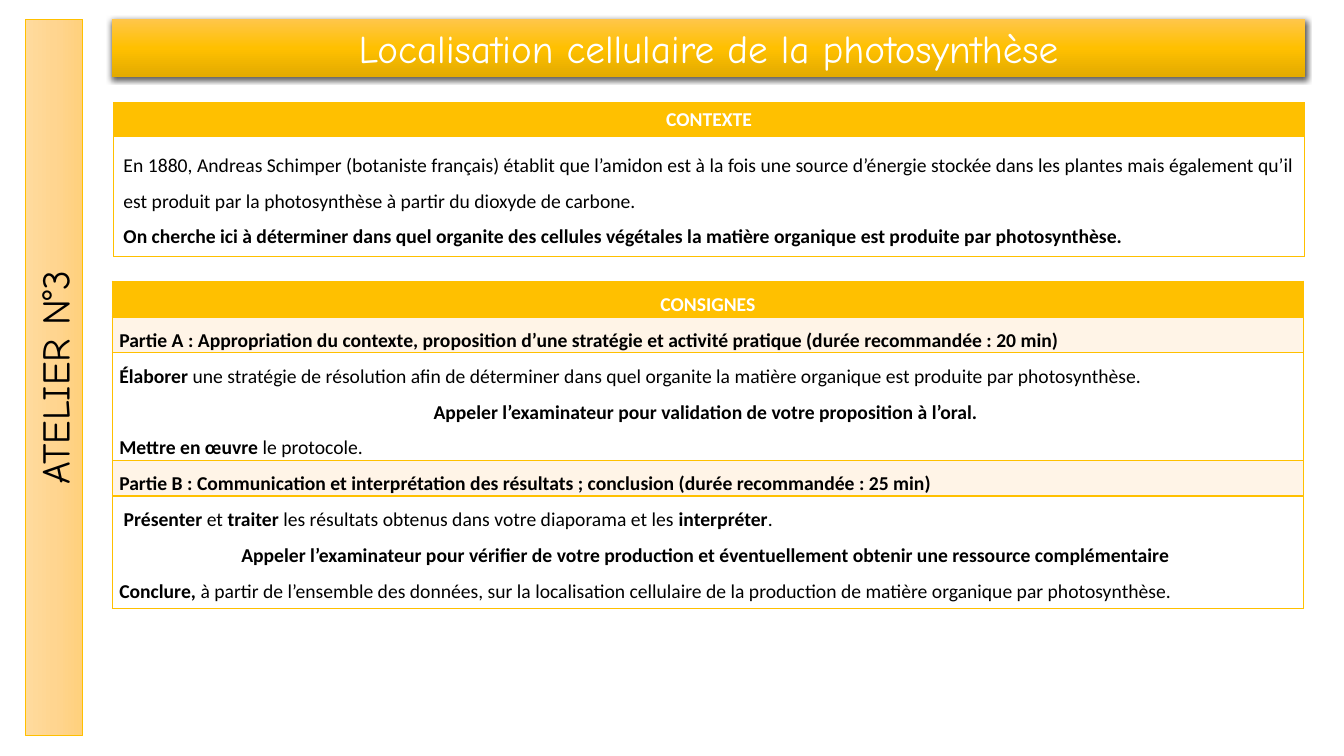
from copy import deepcopy
from lxml import etree
from pptx import Presentation
from pptx.dml.color import RGBColor
from pptx.enum.shapes import MSO_SHAPE
from pptx.enum.text import MSO_ANCHOR, MSO_AUTO_SIZE, PP_ALIGN
from pptx.oxml.ns import qn
from pptx.util import Pt

RECT = MSO_SHAPE.RECTANGLE
MIDDLE = MSO_ANCHOR.MIDDLE
NO_FIT = MSO_AUTO_SIZE.NONE
MID, JUST = PP_ALIGN.CENTER, PP_ALIGN.JUSTIFY

# Content: asterisks switch bold on and off
TITLE = "Localisation cellulaire de la photosynthèse"
SIDE = "ATELIER N°3"
COLORS = {"gold": "FFC000", "cream": "FFF4E7", "white": "FFFFFF", "black": "000000"}
BANNER_FADE = ["FFC64B", "FFC000", "E3AB00"]
SIDE_FADE = ["FFDB9E", "FFD590", "FFD07C"]

# Each row: height, fill, text colour, line spacing, paragraphs
CONTEXT = [
    (22.4, "gold", "white", 1, [(MID, "*CONTEXTE*")]),
    (85.6, "white", "black", 1.5, [
        (JUST, "En 1880, Andreas Schimper (botaniste français) établit que l’amidon est à la fois "
               "une source d’énergie stockée dans les plantes mais également qu’il est produit "
               "par la photosynthèse à partir du dioxyde de carbone."),
        (JUST, "*On cherche ici à déterminer dans quel organite des cellules végétales la matière "
               "organique est produite par photosynthèse.*"),
    ]),
]
TASKS = [
    (20, "gold", "white", 1.5, [(MID, "*CONSIGNES*")]),
    (20, "cream", "black", 1.5, [
        (JUST, "*Partie A : Appropriation du contexte, proposition d’une stratégie et activité "
               "pratique (durée recommandée : 20 min)*"),
    ]),
    (65.5, "white", "black", 1.5, [
        (JUST, "*Élaborer *une stratégie de résolution afin de déterminer dans quel organite la "
               "matière organique est produite par photosynthèse."),
        (MID, "*Appeler l’examinateur pour validation de votre proposition à l’oral. *"),
        (JUST, "*Mettre en œuvre *le protocole."),
    ]),
    (20, "cream", "black", 1.5, [
        (JUST, "*Partie B : Communication et interprétation des résultats ; conclusion "
               "(durée recommandée : 25 min)*"),
    ]),
    (80.6, "white", "black", 1.5, [
        (JUST, "* Présenter *et* traiter *les résultats obtenus dans votre diaporama et les "
               "*interpréter*."),
        (MID, "*Appeler l’examinateur pour vérifier de votre production et éventuellement obtenir "
              "une ressource complémentaire *"),
        (JUST, "*Conclure, *à partir de l’ensemble des données, sur la localisation cellulaire de "
               "la production de matière organique par photosynthèse."),
    ]),
]


def rgb(name):
    return RGBColor.from_string(COLORS[name])


def style(run, font, size, color, bold=False):
    run.font.name, run.font.size, run.font.bold = font, Pt(size), bold
    run.font.color.rgb = rgb(color)


def fade(shape, hues):
    """Fill a shape with evenly spaced gradient stops, top to bottom."""
    shape.fill.gradient()
    shape.fill.gradient_angle = 270
    stops = shape._element.spPr.find(".//" + qn("a:gsLst"))
    stops.append(deepcopy(stops[-1]))
    for i, (stop, hue) in enumerate(zip(shape.fill.gradient_stops, hues)):
        stop.position = i / (len(hues) - 1)
        stop.color.rgb = RGBColor.from_string(hue)


def label(shape, text, color):
    frame = shape.text_frame
    frame.text = text
    frame.word_wrap, frame.auto_size = True, NO_FIT
    frame.vertical_anchor = MIDDLE
    para = frame.paragraphs[0]
    para.alignment = MID
    style(para.runs[0], "Comic Neue", 28, color)


def border(cell, width):
    props = cell._tc.get_or_add_tcPr()
    for i, side in enumerate("LRTB"):
        line = etree.Element(qn("a:ln" + side), w=str(Pt(width)))
        fill = etree.SubElement(line, qn("a:solidFill"))
        etree.SubElement(fill, qn("a:srgbClr"), val=COLORS["gold"])
        props.insert(i, line)


def write(frame, paras, color, gap):
    for i, (align, text) in enumerate(paras):
        para = frame.add_paragraph() if i else frame.paragraphs[0]
        para.alignment, para.line_spacing = align, gap
        for k, part in enumerate(text.split("*")):
            if part:
                run = para.add_run()
                run.text = part
                style(run, "Calibri", 14, color, k % 2 == 1)


def grid(slide, left, top, rows, line, pad):
    """Draw a one-column table; pad is the side and the top margin."""
    high = sum(row[0] for row in rows)
    table = slide.shapes.add_table(len(rows), 1, Pt(left), Pt(top), Pt(851), Pt(high)).table
    table.first_row = table.horz_banding = False
    for i, (height, fill, color, gap, paras) in enumerate(rows):
        table.rows[i].height = Pt(height)
        cell = table.cell(i, 0)
        cell.margin_left = cell.margin_right = Pt(pad[0])
        cell.margin_top = cell.margin_bottom = Pt(pad[1])
        cell.fill.solid()
        cell.fill.fore_color.rgb = rgb(fill)
        border(cell, line)
        write(cell.text_frame, paras, color, gap)


def main():
    deck = Presentation()
    deck.slide_width, deck.slide_height = Pt(960), Pt(540)
    slide = deck.slides.add_slide(deck.slide_layouts[5])

    # Side band
    side = slide.shapes.add_shape(RECT, Pt(-217.4), Pt(249.1), Pt(512), Pt(41))
    side.rotation = 270
    side.shadow.inherit = False
    fade(side, SIDE_FADE)
    side.line.color.rgb, side.line.width = rgb("gold"), Pt(0.5)
    label(side, SIDE, "black")

    # Title banner with its shadow
    title = slide.shapes.title
    title.left, title.top, title.width, title.height = Pt(80), Pt(13.7), Pt(852), Pt(41)
    fade(title, BANNER_FADE)
    title.line.fill.background()
    title.shadow.inherit = False
    effects = title._element.spPr.find(qn("a:effectLst"))
    shade = etree.SubElement(effects, qn("a:outerShdw"), blurRad=str(Pt(4.5)),
                             dist=str(Pt(1.5)), dir="5400000", rotWithShape="0")
    tint = etree.SubElement(shade, qn("a:srgbClr"), val=COLORS["black"])
    etree.SubElement(tint, qn("a:alpha"), val="63000")
    label(title, TITLE, "white")

    # Tables
    grid(slide, 81, 73.4, CONTEXT, 0.5, (7.2, 3.6))
    grid(slide, 80.2, 200.9, TASKS, 1, (5, 0))

    deck.save("out.pptx")


if __name__ == "__main__":
    main()
